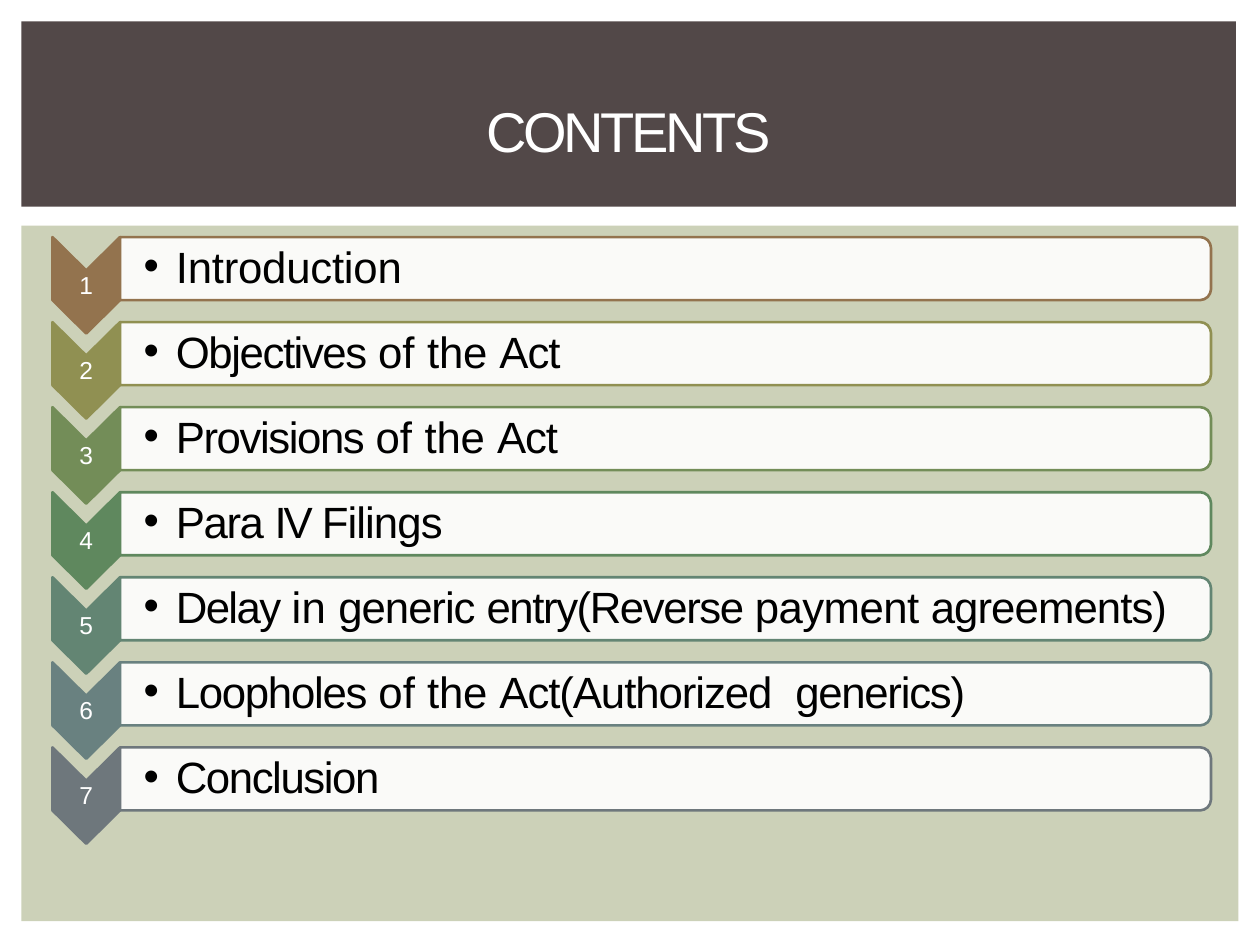
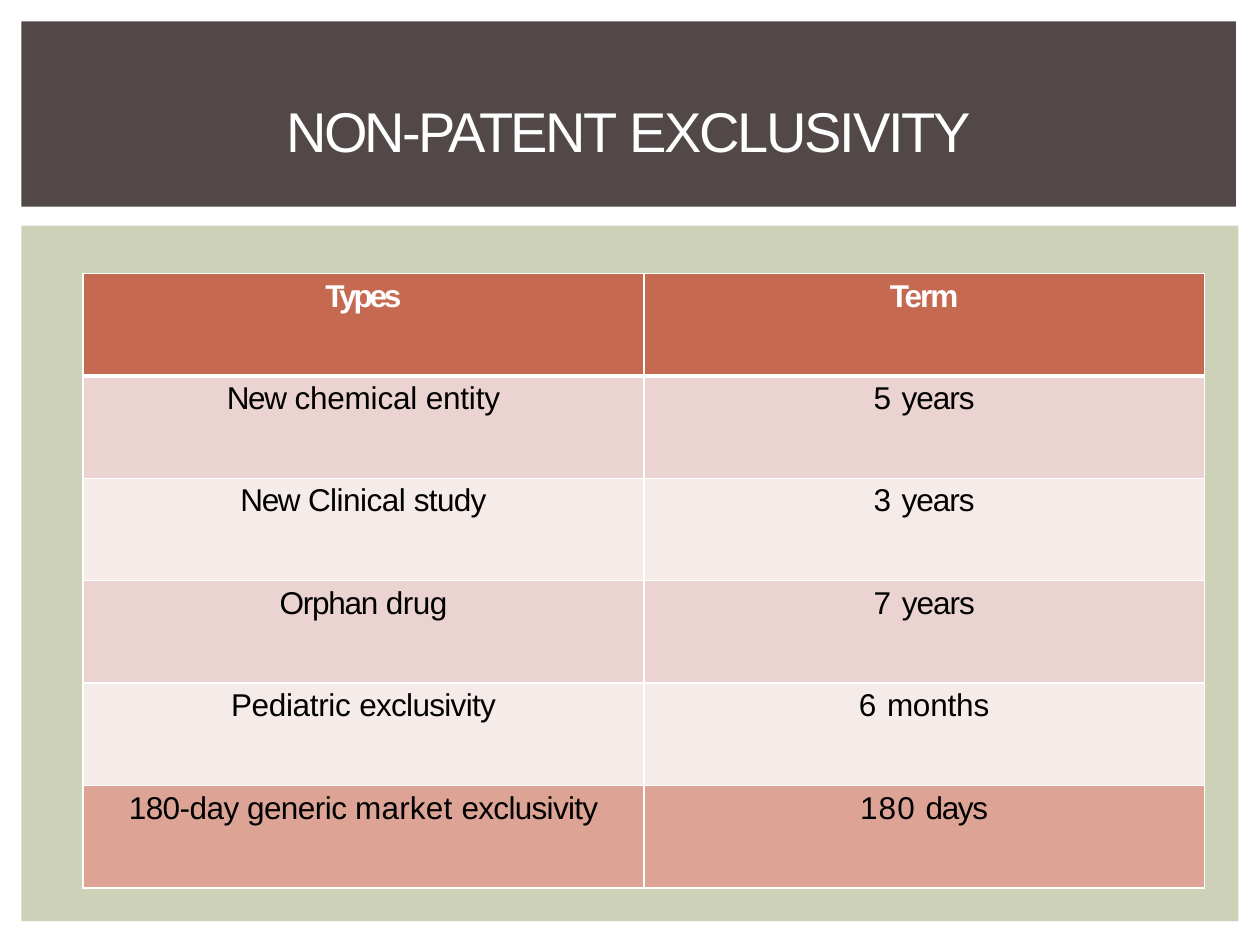
"""Build the contents and non-patent exclusivity slides."""
from dataclasses import dataclass
from typing import NamedTuple

import pptx
import pptx.dml.color
import pptx.enum.shapes
import pptx.enum.text
import pptx.oxml
import pptx.oxml.ns
import pptx.util

Pt = pptx.util.Pt
qn = pptx.oxml.ns.qn
ALIGN = pptx.enum.text.PP_ALIGN
NS = pptx.oxml.ns.nsdecls("a")


@dataclass(frozen=True)
class Theme:
    """Colours, font and type sizes of the deck."""
    font: str = "Arial"
    band: str = "524848"
    panel: str = "CCD1B8"
    white: str = "FFFFFF"
    ink: str = "000000"
    header: str = "C56951"
    dark_row: str = "EAD3D0"
    light_row: str = "F5EBE9"
    last_row: str = "DDA496"
    title_size: float = 32
    item_size: float = 25
    table_size: float = 18
    number_size: float = 14


class Span(NamedTuple):
    """A piece of text with its letter spacing in points."""
    text: str
    spacing: float


class Box(NamedTuple):
    """Left, top, width and height in points."""
    left: float
    top: float
    width: float
    height: float


class Item(NamedTuple):
    """One contents row."""
    color: str
    spans: list[Span]


class TableRow(NamedTuple):
    """One table row."""
    fill: str
    cells: list[list[Span]]


THEME = Theme()
BAND = Box(12.24, 12.24, 694.1, 105.84)
PANEL = Box(12.24, 128.88, 695.52, 397.44)
TABLE = Box(47.52, 156.24, 640.8, 351.36)
LIST_TEXT = Box(82.1, 134.64, 610, 335)

ROW_TOP, ROW_PITCH, ROW_HEIGHT = 135.5, 48.6, 36
CHEVRON_LEFT, CARD_LEFT, CARD_RIGHT = 30, 68.6, 692
CHEVRON_DROP = 19.1
LINE_HEIGHT = 30
ITEM_INDENT = 18.4
TAB_STOP = 372.4

ITEMS = [
    Item("93734E", [Span("Introduction", -0.1)]),
    Item("909052", [Span("Objectives ", -0.8), Span("of ", 0.1), Span("the ", -0.1),
                    Span("Act", -0.6)]),
    Item("738D58", [Span("Provisions ", -0.8), Span("of ", 0.1), Span("the ", -0.1),
                    Span("Act", -0.6)]),
    Item("5F885E", [Span("Para ", -0.8), Span("IV ", -1.8), Span("Filings", -0.5)]),
    Item("638573", [Span("Delay ", -0.9), Span("in ", 0.1), Span("generic ", -0.6),
                    Span("entry(Reverse ", -0.8), Span("payment ", -0.3),
                    Span("agreements)", -0.5)]),
    Item("698180", [Span("Loopholes ", -0.7), Span("of", 0.1), Span(" the ", -0.1),
                    Span("Act(Authorized\t", -0.6), Span("generics)", -0.7)]),
    Item("6E777C", [Span("Conclusion", -0.8)]),
]

TABLE_ROWS = [
    TableRow(THEME.header, [[Span("Types", -1.8)], [Span("Term", -1.2)]]),
    TableRow(THEME.dark_row, [[Span("New ", -0.8), Span("chemical entity", -0.1)],
                              [Span("5 ", 0.5), Span("years", -0.6)]]),
    TableRow(THEME.light_row, [[Span("New ", -0.8), Span("Clinical ", -0.3),
                                Span("study", -0.4)],
                               [Span("3 ", 0.5), Span("years", -0.6)]]),
    TableRow(THEME.dark_row, [[Span("Orphan ", -0.7), Span("drug", -0.3)],
                              [Span("7 ", 0.6), Span("years", -0.6)]]),
    TableRow(THEME.light_row, [[Span("Pediatric ", -0.2), Span("exclusivity", -0.4)],
                               [Span("6 ", 0.5), Span("months", -0.1)]]),
    TableRow(THEME.last_row, [[Span("180-day generic ", -0.3), Span("market ", 0.1),
                               Span("exclusivity", -0.4)],
                              [Span("180 ", 0.6), Span("days", -0.8)]]),
]


def rgb(color: str) -> pptx.dml.color.RGBColor:
    return pptx.dml.color.RGBColor.from_string(color)


def in_points(values) -> list:
    return [Pt(v) for v in values]


def write_spans(p, spans: list[Span], size: float, color: str, bold: bool = False) -> None:
    for span in spans:
        r = p.add_run()
        r.text = span.text
        r.font.name = THEME.font
        r.font.size = Pt(size)
        r.font.bold = bold
        r.font.color.rgb = rgb(color)
        r.font._element.set("spc", str(round(span.spacing * 100)))


def prepare_frame(tf, top_inset: float) -> None:
    tf.word_wrap = True
    tf.vertical_anchor = pptx.enum.text.MSO_ANCHOR.TOP
    tf.margin_left = tf.margin_right = tf.margin_bottom = 0
    tf.margin_top = Pt(top_inset)


def add_rect(slide, box: Box, color: str):
    sp = slide.shapes.add_shape(pptx.enum.shapes.MSO_SHAPE.RECTANGLE, *in_points(box))
    sp.shadow.inherit = False
    sp.fill.solid()
    sp.fill.fore_color.rgb = rgb(color)
    sp.line.fill.background()
    return sp


def add_text_box(slide, box: Box, top_inset: float):
    tf = slide.shapes.add_textbox(*in_points(box)).text_frame
    prepare_frame(tf, top_inset)
    return tf


def add_polygon(slide, points: list[tuple], fill: str, line: str):
    start, *rest = [tuple(in_points(point)) for point in points]
    builder = slide.shapes.build_freeform(*start)
    builder.add_line_segments(rest, close=True)
    sp = builder.convert_to_shape()
    sp.shadow.inherit = False
    sp.fill.solid()
    sp.fill.fore_color.rgb = rgb(fill)
    sp.line.color.rgb = rgb(line)
    sp.line.width = Pt(1.5)
    return sp


def add_base_slide(prs, title: list[Span]):
    slide = prs.slides.add_slide(prs.slide_layouts[6])
    add_rect(slide, PANEL, THEME.panel)
    tf = add_rect(slide, BAND, THEME.band).text_frame
    prepare_frame(tf, 42.8)
    p = tf.paragraphs[0]
    p.alignment = ALIGN.CENTER
    write_spans(p, title, THEME.title_size, THEME.white)
    return slide


def add_chevron(slide, top: float, color: str, number: int) -> None:
    middle = (CHEVRON_LEFT + CARD_LEFT) / 2
    bottom = top + ROW_HEIGHT
    add_polygon(slide, [(CARD_LEFT, top), (middle, top + CHEVRON_DROP), (CHEVRON_LEFT, top),
                        (CHEVRON_LEFT, bottom), (middle, bottom + CHEVRON_DROP),
                        (CARD_LEFT, bottom)], color, color)
    tf = add_text_box(slide, Box(middle - 5, top + 16.5, 10, 18.7), 2.2)
    p = tf.paragraphs[0]
    p.alignment = ALIGN.CENTER
    write_spans(p, [Span(str(number), 0)], THEME.number_size, THEME.white)


def add_card(slide, top: float, color: str) -> None:
    corner = [(6, 0), (3.8, 0.5), (1.8, 1.8), (0.5, 3.8), (0, 6)]
    upper = [(CARD_RIGHT - x, top + y) for x, y in corner]
    lower = [(CARD_RIGHT - x, top + ROW_HEIGHT - y) for x, y in reversed(corner)]
    outline = [(CARD_LEFT, top), *upper, *lower, (CARD_LEFT, top + ROW_HEIGHT)]
    sp = add_polygon(slide, outline, THEME.white, color)
    fill_color = sp._element.spPr.find(qn("a:solidFill"))[0]
    fill_color.append(pptx.oxml.parse_xml(f'<a:alpha {NS} val="90000"/>'))


def format_bullet(p) -> None:
    pPr = p._p.get_or_add_pPr()
    pPr.set("marL", str(Pt(ITEM_INDENT)))
    pPr.set("indent", str(-Pt(ITEM_INDENT)))
    tabs = "".join(f'<a:tab pos="{Pt(stop)}" algn="l"/>' for stop in (ITEM_INDENT, TAB_STOP))
    for xml in (f'<a:buFont {NS} typeface="{THEME.font}"/>',
                f'<a:buChar {NS} char="•"/>',
                f'<a:tabLst {NS}>{tabs}</a:tabLst>'):
        pPr.append(pptx.oxml.parse_xml(xml))


def add_contents_slide(prs) -> None:
    slide = add_base_slide(prs, [Span("CONTENTS", -1.9)])
    for i, item in enumerate(ITEMS):
        top = ROW_TOP + i * ROW_PITCH
        add_chevron(slide, top, item.color, i + 1)
        add_card(slide, top, item.color)
    tf = add_text_box(slide, LIST_TEXT, 2.3)
    for i, item in enumerate(ITEMS):
        p = tf.add_paragraph() if i else tf.paragraphs[0]
        format_bullet(p)
        p.line_spacing = Pt(LINE_HEIGHT)
        p.space_before = Pt(ROW_PITCH - LINE_HEIGHT if i else 0)
        write_spans(p, item.spans, THEME.item_size, THEME.ink)


def set_borders(cell, top: float, bottom: float) -> None:
    tcPr = cell._tc.get_or_add_tcPr()
    for i, (side, width) in enumerate(zip("LRTB", (1, 1, top, bottom))):
        tcPr.insert(i, pptx.oxml.parse_xml(
            f'<a:ln{side} {NS} w="{Pt(width)}"><a:solidFill>'
            f'<a:srgbClr val="{THEME.white}"/></a:solidFill></a:ln{side}>'))


def add_exclusivity_slide(prs) -> None:
    slide = add_base_slide(prs, [Span("NON-PATENT ", -1.6), Span("EXCLUSIVITY", -1.3)])
    columns = len(TABLE_ROWS[0].cells)
    table = slide.shapes.add_table(len(TABLE_ROWS), columns, *in_points(TABLE)).table
    table.horz_banding = False
    for column in table.columns:
        column.width = Pt(TABLE.width / columns)
    for i, row in enumerate(TABLE_ROWS):
        table.rows[i].height = Pt(TABLE.height / len(TABLE_ROWS))
        for j, spans in enumerate(row.cells):
            cell = table.cell(i, j)
            cell.fill.solid()
            cell.fill.fore_color.rgb = rgb(row.fill)
            cell.margin_left = cell.margin_right = cell.margin_bottom = 0
            cell.margin_top = Pt(2.9)
            set_borders(cell, 3 if i == 1 else 1, 3 if i == 0 else 1)
            p = cell.text_frame.paragraphs[0]
            p.alignment = ALIGN.CENTER
            color = THEME.ink if i else THEME.white
            write_spans(p, spans, THEME.table_size, color, bold=i == 0)


def main() -> None:
    prs = pptx.Presentation()
    prs.slide_width, prs.slide_height = Pt(720), Pt(540)
    add_contents_slide(prs)
    add_exclusivity_slide(prs)
    prs.save("out.pptx")


if __name__ == "__main__":
    main()
